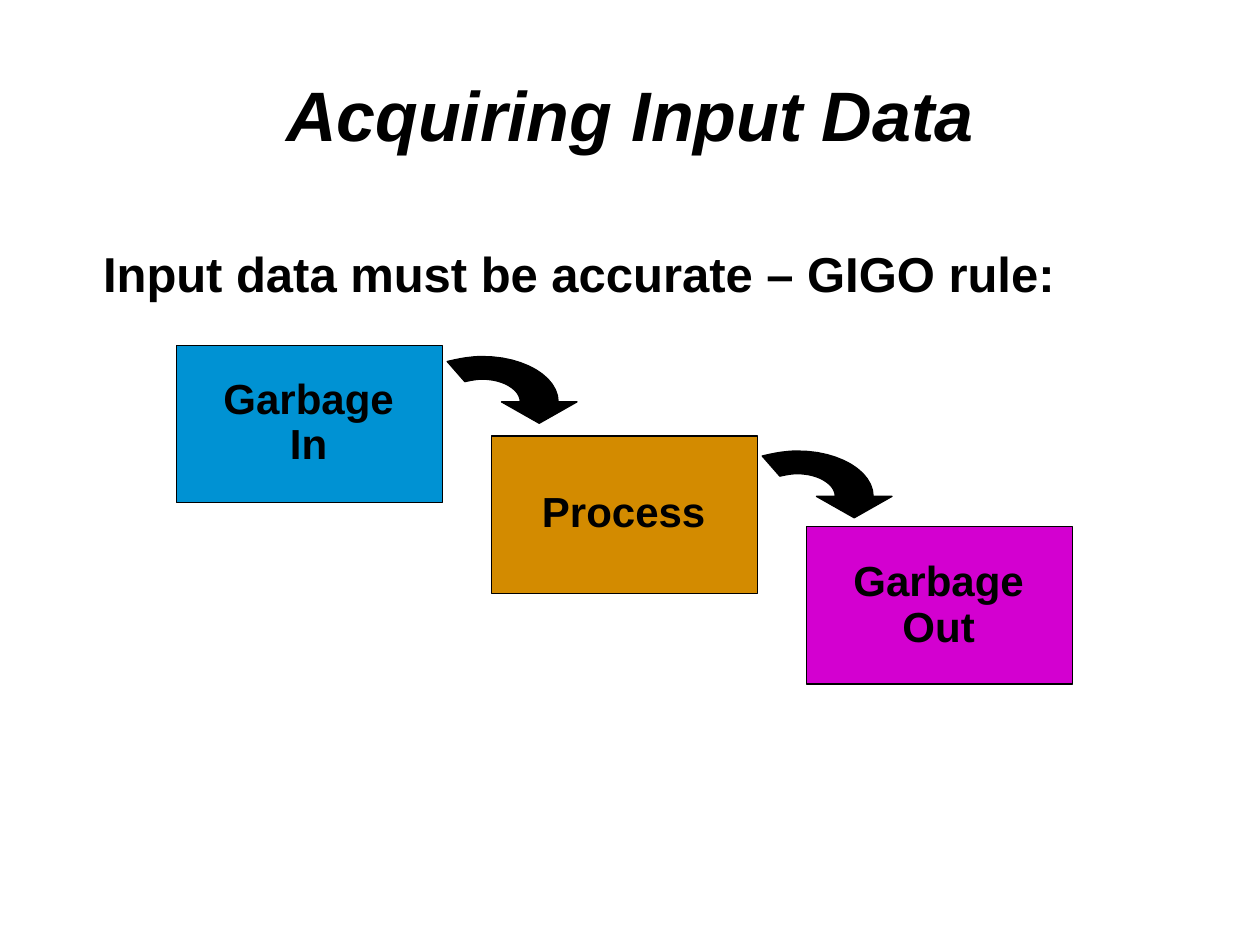
from pptx import Presentation
from pptx.dml.color import RGBColor
from pptx.enum.shapes import MSO_SHAPE
from pptx.enum.text import MSO_ANCHOR, PP_ALIGN
from pptx.util import Inches, Pt

COLORS = {"ink": "000000", "input": "0092D3", "process": "D38B00", "output": "D300D0"}
STEP_X, STEP_Y = 2.5, 0.72
ARROW_DROP = 0.75
CURVE_STEPS = 12


def add_text(text, left, top, width, height, size, align=PP_ALIGN.CENTER,
             anchor=MSO_ANCHOR.TOP, italic=False):
    frame = slide.shapes.add_textbox(
        Inches(left), Inches(top), Inches(width), Inches(height)).text_frame
    frame.word_wrap = True
    frame.vertical_anchor = anchor
    frame.text = text
    paragraph = frame.paragraphs[0]
    paragraph.alignment = align
    paragraph.line_spacing = 0.9
    font = paragraph.runs[0].font
    font.name, font.size, font.bold, font.italic = "Arial", Pt(size), True, italic
    font.color.rgb = RGBColor.from_string(COLORS["ink"])


def paint(shape, fill):
    shape.shadow.inherit = False
    shape.fill.solid()
    shape.fill.fore_color.rgb = RGBColor.from_string(COLORS[fill])
    shape.line.color.rgb = RGBColor.from_string(COLORS["ink"])
    shape.line.width = Pt(0.75)


prs = Presentation()
prs.slide_width, prs.slide_height = Inches(10), Inches(7.5)
slide = prs.slides.add_slide(prs.slide_layouts[6])

add_text("Acquiring Input Data", 0.75, 0.57, 8.5, 0.75, 40,
         anchor=MSO_ANCHOR.MIDDLE, italic=True)
add_text("Input data must be accurate – GIGO rule:", 0.72, 1.94, 8.47, 0.6, 28,
         align=PP_ALIGN.LEFT)

# Label, fill, and label offset and height inside the box
stages = [
    ("Garbage In", "input", 0.21, 0.82),
    ("Process", "process", 0.23, 0.5),
    ("Garbage Out", "output", 0.22, 0.82),
]
for i, (label, fill, label_drop, label_height) in enumerate(stages):
    left, top = 1.4 + i * STEP_X, 2.74 + i * STEP_Y
    box = slide.shapes.add_shape(
        MSO_SHAPE.RECTANGLE, Inches(left), Inches(top), Inches(2.11), Inches(1.25))
    paint(box, fill)
    if label == "Process":
        label_drop = 0.39
    add_text(label, left + 0.2, top + label_drop, 1.7, label_height, 24)

# Curved arrow outline: four points are a cubic Bézier curve, one is a corner
arrow_outline = [
    [(4.13, 3.19), (4.13, 3.09), (3.99, 3.01), (3.83, 3.01)],
    [(3.83, 3.01), (3.78, 3.01), (3.73, 3.02), (3.69, 3.03)],
    [(3.55, 2.87)],
    [(3.55, 2.87), (3.63, 2.85), (3.73, 2.83), (3.83, 2.83)],
    [(3.83, 2.83), (4.16, 2.83), (4.43, 2.99), (4.43, 3.19)],
    [(4.58, 3.19)],
    [(4.28, 3.36)],
    [(3.98, 3.19)],
]
arrow_points = []
for segment in arrow_outline:
    if len(segment) == 1:
        arrow_points += segment
        continue
    for n in range(CURVE_STEPS + 1):
        t = n / CURVE_STEPS
        weights = ((1 - t) ** 3, 3 * t * (1 - t) ** 2, 3 * t ** 2 * (1 - t), t ** 3)
        arrow_points.append(tuple(
            sum(w * point[axis] for w, point in zip(weights, segment))
            for axis in (0, 1)))

for i in range(len(stages) - 1):
    outline = [(Inches(x + i * STEP_X), Inches(y + i * ARROW_DROP))
               for x, y in arrow_points]
    builder = slide.shapes.build_freeform(*outline[0])
    builder.add_line_segments(outline[1:], close=True)
    paint(builder.convert_to_shape(), "ink")

prs.save("out.pptx")
